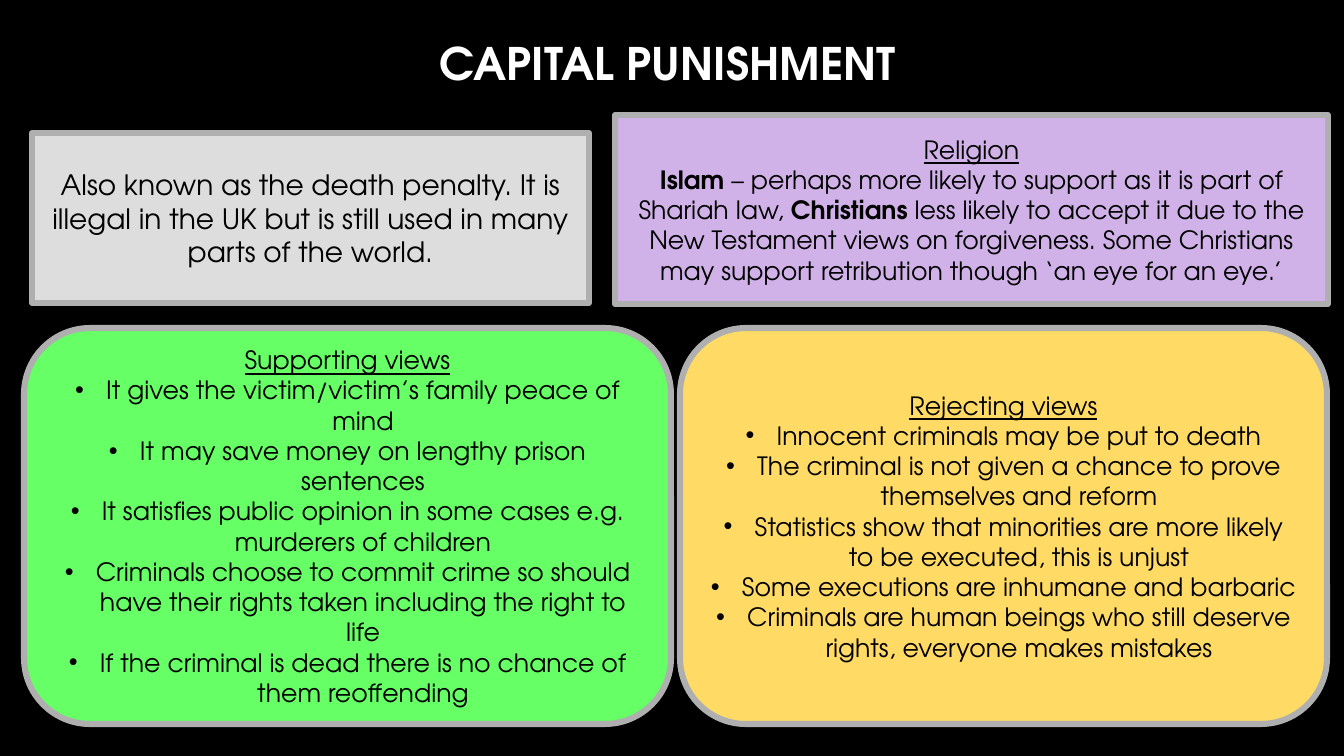
import pptx
import pptx.util
import pptx.dml.color
import pptx.enum.shapes
import pptx.enum.text
import pptx.oxml.ns
import lxml.etree

RGBColor = pptx.dml.color.RGBColor
BLACK = RGBColor(0x00, 0x00, 0x00)
WHITE = RGBColor(0xFF, 0xFF, 0xFF)
BORDER = RGBColor(0xAF, 0xAF, 0xAF)
GREY = RGBColor(0xDD, 0xDD, 0xDD)
PURPLE = RGBColor(0xD1, 0xB2, 0xE8)
GREEN = RGBColor(0x66, 0xFF, 0x66)
YELLOW = RGBColor(0xFF, 0xDA, 0x65)

PX = 914400 / 100.8
RECT = pptx.enum.shapes.MSO_SHAPE.RECTANGLE
ROUNDED = pptx.enum.shapes.MSO_SHAPE.ROUNDED_RECTANGLE
ANCHOR = pptx.enum.text.MSO_ANCHOR

SUPPORTING = [
    "It gives the victim/victim’s family peace of mind",
    "It may save money on lengthy prison sentences",
    "It satisfies public opinion in some cases e.g. murderers of children",
    "Criminals choose to commit crime so should have their rights taken "
    "including the right to life",
    "If the criminal is dead there is no chance of them reoffending",
]
REJECTING = [
    "Innocent criminals may be put to death",
    "The criminal is not given a chance to prove themselves and reform",
    "Statistics show that minorities are more likely to be executed, this is unjust",
    "Some executions are inhumane and barbaric",
    "Criminals are human beings who still deserve rights, everyone makes mistakes",
]
RELIGION = [
    ("Islam ", {"bold": True}),
    ("– perhaps more likely to support as it is part of Shariah law, ", {}),
    ("Christians", {"bold": True}),
    (" less likely to accept it due to the New Testament views on forgiveness. "
     "Some Christians may support retribution though ‘an eye for an eye.’", {}),
]


def px(n):
    return pptx.util.Emu(round(n * PX))


class Deck:
    font = "TeX Gyre Adventor"
    border_width = pptx.util.Pt(4.33)
    bullet_indent = 31

    def __init__(self, prs):
        self.slide = prs.slides.add_slide(prs.slide_layouts[6])
        fill = self.slide.background.fill
        fill.solid()
        fill.fore_color.rgb = BLACK

    def paragraph(self, tf, runs, size, color=BLACK, bullet=False):
        """Fill the empty first paragraph or add one; runs are (text, format) pairs."""
        p = tf.paragraphs[0]
        if p.runs:
            p = tf.add_paragraph()
        p.alignment = pptx.enum.text.PP_ALIGN.CENTER
        for text, formats in runs:
            r = p.add_run()
            r.text = text
            style = {"name": self.font, "size": pptx.util.Pt(size), **formats}
            for key, value in style.items():
                setattr(r.font, key, value)
            r.font.color.rgb = color
        if bullet:
            self.bullet(p)

    def bullet(self, p):
        pPr = p._p.get_or_add_pPr()
        indent = px(self.bullet_indent)
        pPr.set("marL", str(indent))
        pPr.set("indent", str(-indent))
        for tag, key, value in (("a:buFont", "typeface", "Arial"),
                                ("a:buChar", "char", "•")):
            bu = lxml.etree.SubElement(pPr, pptx.oxml.ns.qn(tag))
            bu.set(key, value)

    def title(self, box, text):
        sp = self.slide.shapes.add_textbox(*map(px, box))
        sp.text_frame.word_wrap = True
        self.paragraph(sp.text_frame, [(text, {"bold": True})], 32, WHITE)

    def card(self, kind, box, color):
        sp = self.slide.shapes.add_shape(kind, *map(px, box))
        sp.shadow.inherit = False
        sp.fill.solid()
        sp.fill.fore_color.rgb = color
        sp.line.color.rgb = BORDER
        sp.line.width = self.border_width
        tf = sp.text_frame
        tf.word_wrap = True
        tf.vertical_anchor = ANCHOR.MIDDLE
        return tf

    def heading(self, tf, text):
        self.paragraph(tf, [(text, {"underline": True})], 18)

    def views(self, left, color, heading, points):
        tf = self.card(ROUNDED, (left, 328, 647, 396), color)
        self.heading(tf, heading)
        for point in points:
            self.paragraph(tf, [(point, {})], 18, bullet=True)


def main():
    prs = pptx.Presentation()
    prs.slide_width, prs.slide_height = px(1344), px(756)
    deck = Deck(prs)

    deck.title((32, 31, 1271, 65), "CAPITAL PUNISHMENT")

    definition = deck.card(RECT, (32, 133, 557, 170), GREY)
    deck.paragraph(definition, [(
        "Also known as the death penalty. It is illegal in the UK "
        "but is still used in many parts of the world.", {})], 20)

    deck.views(24, GREEN, "Supporting views", SUPPORTING)
    deck.views(680, YELLOW, "Rejecting views", REJECTING)

    religion = deck.card(RECT, (615, 115, 713, 189), PURPLE)
    deck.heading(religion, "Religion")
    deck.paragraph(religion, RELIGION, 18)

    prs.save("out.pptx")


if __name__ == "__main__":
    main()
